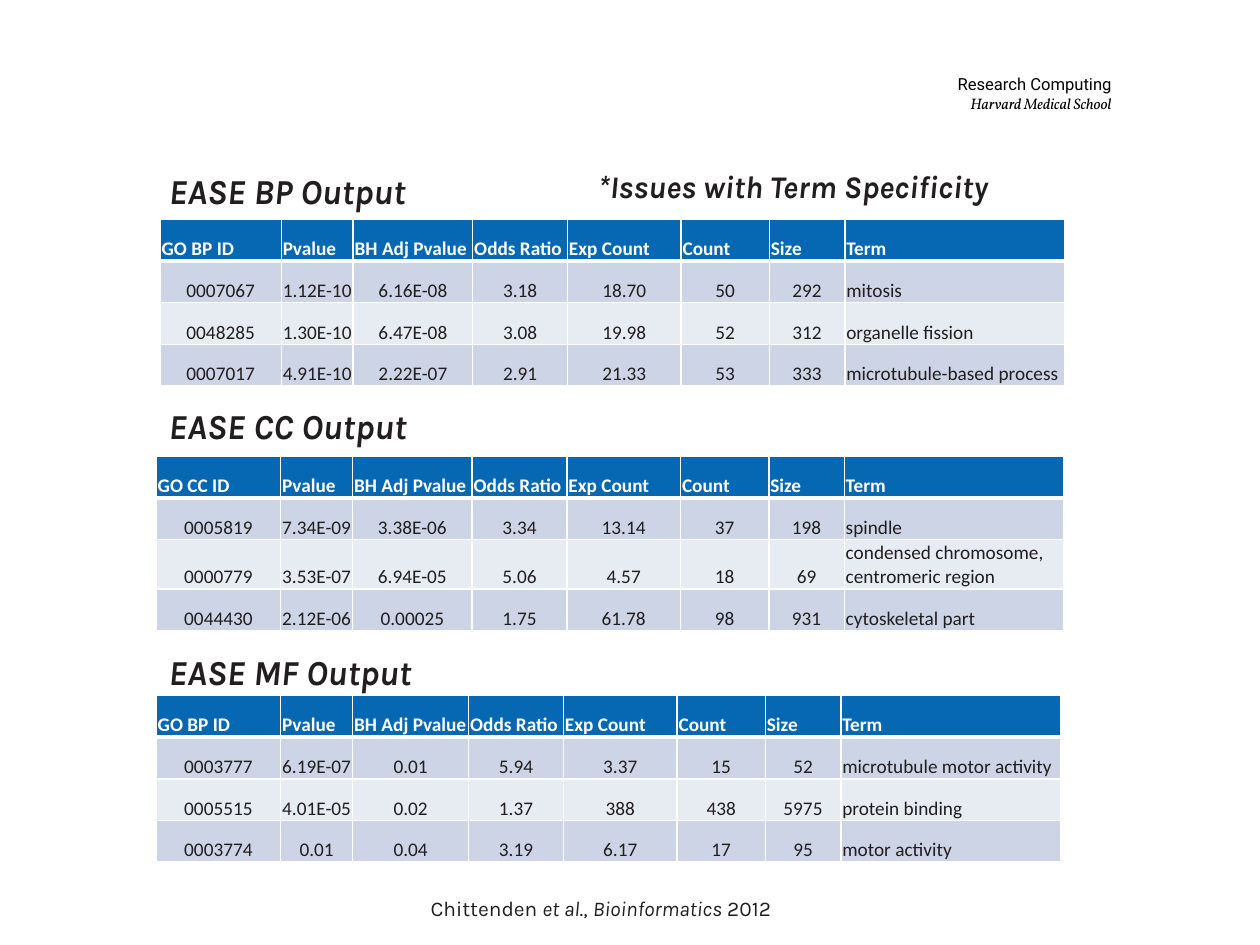
from dataclasses import dataclass

from lxml.etree import SubElement
from pptx import Presentation
from pptx.dml.color import RGBColor
from pptx.enum.text import MSO_ANCHOR, MSO_AUTO_SIZE, PP_ALIGN
from pptx.oxml.ns import qn
from pptx.util import Cm, Pt

INK, WHITE, BLACK = "221E1F", "FFFFFF", "000000"
HEADER_FILL = "0668B3"
BAND_FILLS = ("CCD4E5", "E7EBF2")
ROW_HEIGHT = 0.84
HEADING_SIZE = (10.52, 1.12)


@dataclass(frozen=True)
class Style:
    size: float
    font: str = "Karla"
    color: str = INK
    bold: bool = False
    italic: bool = False


@dataclass(frozen=True)
class OutputTable:
    """One enrichment table with its heading; lengths in centimetres."""
    heading: str
    heading_top: float
    left: float
    top: float
    id_width: float
    adjusted_width: float
    id_label: str
    rows: tuple


HEADING = Style(20, bold=True, italic=True)
HEADER_CELL = Style(11, "Calibri", WHITE, bold=True)
BODY_CELL = Style(11, "Calibri")

OUTPUT_TABLES = (
    OutputTable("EASE BP Output", 3.28, 3.23, 4.42, 2.44, 2.41, "GO BP ID", (
        ("0007067", "1.12E-10", "6.16E-08", "3.18", "18.70", "50", "292", "mitosis"),
        ("0048285", "1.30E-10", "6.47E-08", "3.08", "19.98", "52", "312", "organelle fission"),
        ("0007017", "4.91E-10", "2.22E-07", "2.91", "21.33", "53", "333",
         "microtubule-based process"),
    )),
    OutputTable("EASE CC Output", 8.03, 3.15, 9.2, 2.51, 2.41, "GO CC ID", (
        ("0005819", "7.34E-09", "3.38E-06", "3.34", "13.14", "37", "198", "spindle"),
        ("0000779", "3.53E-07", "6.94E-05", "5.06", "4.57", "18", "69",
         "condensed chromosome, centromeric region"),
        ("0044430", "2.12E-06", "0.00025", "1.75", "61.78", "98", "931", "cytoskeletal part"),
    )),
    OutputTable("EASE MF Output", 12.98, 3.15, 14.02, 2.51, 2.34, "GO BP ID", (
        ("0003777", "6.19E-07", "0.01", "5.94", "3.37", "15", "52",
         "microtubule motor activity"),
        ("0005515", "4.01E-05", "0.02", "1.37", "388", "438", "5975", "protein binding"),
        ("0003774", "0.01", "0.04", "3.19", "6.17", "17", "95", "motor activity"),
    )),
)


def rgb(color: str) -> RGBColor:
    return RGBColor.from_string(color)


def add_run(paragraph, text: str, style: Style) -> None:
    run = paragraph.add_run()
    run.text = text
    font = run.font
    font.size, font.name = Pt(style.size), style.font
    font.bold, font.italic = style.bold, style.italic
    font.color.rgb = rgb(style.color)


def fill_text(shape, lines, align=PP_ALIGN.LEFT, anchor=MSO_ANCHOR.TOP) -> None:
    """Write lines, each a list of (text, style) runs."""
    frame = shape.text_frame
    frame.word_wrap = True
    frame.auto_size = MSO_AUTO_SIZE.NONE
    frame.vertical_anchor = anchor
    for index, runs in enumerate(lines):
        paragraph = frame.add_paragraph() if index else frame.paragraphs[0]
        paragraph.alignment = align
        for text, style in runs:
            add_run(paragraph, text, style)


def add_text(slide, left: float, top: float, width: float, height: float, lines, **layout):
    shape = slide.shapes.add_textbox(Cm(left), Cm(top), Cm(width), Cm(height))
    fill_text(shape, lines, **layout)
    return shape


def add_borders(cell, bottom_width: float) -> None:
    properties = cell._tc.get_or_add_tcPr()
    for side, width in (("L", 1), ("R", 1), ("T", 1), ("B", bottom_width)):
        line = SubElement(properties, qn(f"a:ln{side}"), w=str(Pt(width)))
        SubElement(SubElement(line, qn("a:solidFill")), qn("a:srgbClr"), val=WHITE)


def format_cell(cell, text: str, style: Style, fill: str, align, bottom_width: float) -> None:
    add_borders(cell, bottom_width)
    cell.fill.solid()
    cell.fill.fore_color.rgb = rgb(fill)
    cell.margin_left = cell.margin_right = cell.margin_top = Cm(0.03)
    cell.margin_bottom = 0
    cell.vertical_anchor = MSO_ANCHOR.BOTTOM
    paragraph = cell.text_frame.paragraphs[0]
    paragraph.alignment = align
    add_run(paragraph, text, style)


def add_output_table(slide, output: OutputTable) -> None:
    labels = (output.id_label, "Pvalue", "BH Adj Pvalue", "Odds Ratio",
              "Exp Count", "Count", "Size", "Term")
    widths = (output.id_width, 1.45, output.adjusted_width, 1.91, 2.29, 1.78, 1.52, 4.43)
    row_count = len(output.rows) + 1
    table = slide.shapes.add_table(
        row_count, len(labels), Cm(output.left), Cm(output.top),
        Cm(sum(widths)), Cm(ROW_HEIGHT * row_count)).table
    for column, width in zip(table.columns, widths):
        column.width = Cm(width)
    for column, label in enumerate(labels):
        format_cell(table.cell(0, column), label, HEADER_CELL, HEADER_FILL, PP_ALIGN.LEFT, 3)
    for row, values in enumerate(output.rows, 1):
        for column, value in enumerate(values):
            is_term = column == len(labels) - 1
            format_cell(table.cell(row, column), value, BODY_CELL, BAND_FILLS[(row - 1) % 2],
                        PP_ALIGN.LEFT if is_term else PP_ALIGN.CENTER, 1)


def main() -> None:
    presentation = Presentation()
    presentation.slide_width, presentation.slide_height = Cm(25.4), Cm(19.05)
    slide = presentation.slides.add_slide(presentation.slide_layouts[5])

    # Department name, top right
    department = add_text(
        slide, 16.18, 1.04, 6.43, 1.68,
        [[("Research Computing", Style(9.5, "Roboto", BLACK))],
         [("Harvard Medical School", Style(8.7, "Vollkorn", BLACK, italic=True))]],
        align=PP_ALIGN.RIGHT, anchor=MSO_ANCHOR.MIDDLE)
    frame = department.text_frame
    frame.margin_left = frame.margin_right = Cm(0.2)
    frame.margin_top = frame.margin_bottom = Cm(0.1)

    # Tables
    for output in OUTPUT_TABLES:
        add_output_table(slide, output)

    # Headings: the first one is the slide title
    first, *others = OUTPUT_TABLES
    title = slide.shapes.title
    title.left, title.top = Cm(3.15), Cm(first.heading_top)
    title.width, title.height = (Cm(length) for length in HEADING_SIZE)
    fill_text(title, [[(first.heading, HEADING)]])
    for output in others:
        add_text(slide, 3.15, output.heading_top, *HEADING_SIZE, [[(output.heading, HEADING)]])

    # Citation
    plain, italic = Style(12), Style(12, italic=True)
    add_text(slide, 8.43, 17.93, 9.14, 0.76,
             [[("Chittenden ", plain), ("et al", italic), ("., ", plain),
               ("Bioinformatics", italic), (" 2012", plain)]])

    # Remark beside the first heading
    add_text(slide, 11.81, 3.25, 10.52, 1.02,
             [[("*Issues with Term Specificity", Style(18, bold=True, italic=True))]])

    presentation.save("out.pptx")


if __name__ == "__main__":
    main()
